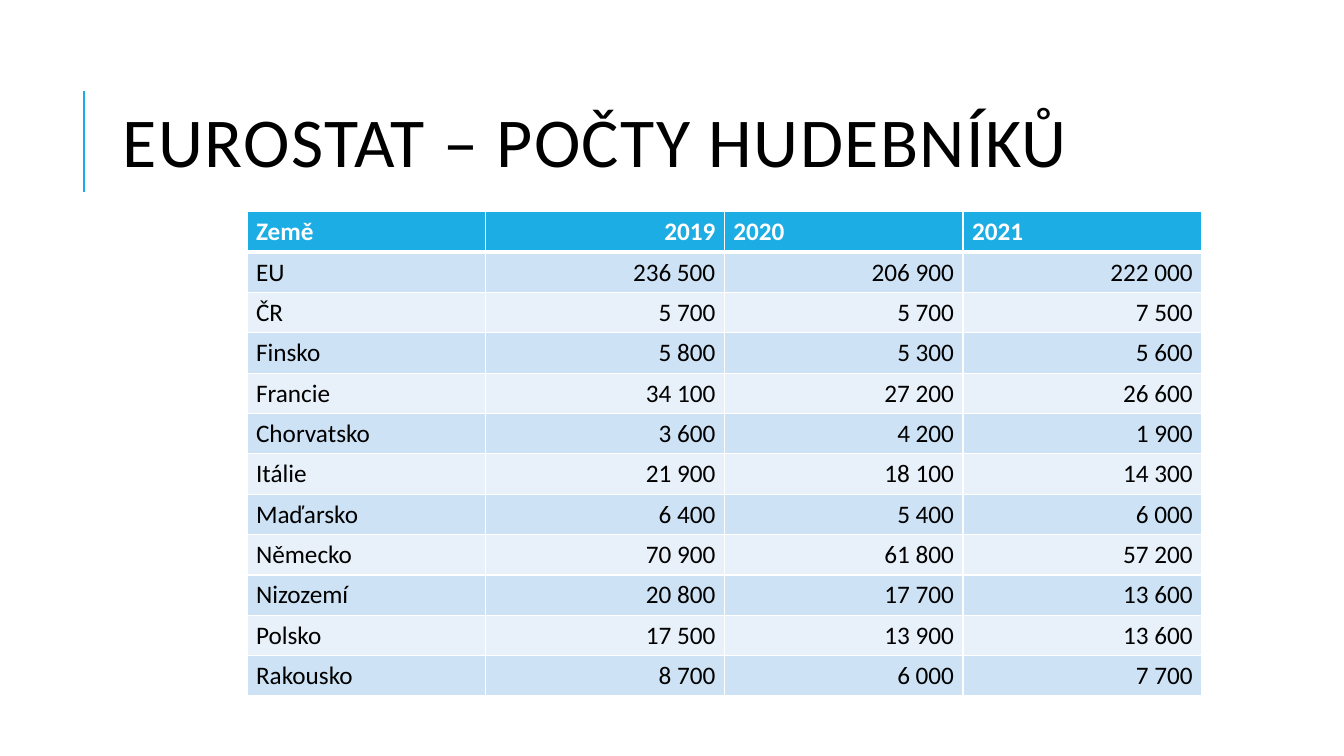
from lxml.etree import SubElement
from pptx import Presentation
from pptx.dml.color import RGBColor
from pptx.enum.shapes import MSO_CONNECTOR
from pptx.enum.text import MSO_ANCHOR, PP_ALIGN
from pptx.oxml.ns import qn
from pptx.util import Inches, Pt

ACCENT, WHITE, BLACK = "1CADE4", "FFFFFF", "000000"
BANDS = ["E8F1FA", "CDE3F5"]
HEADER = ["Země", "2019", "2020", "2021"]
MUSICIANS = [
    ("EU", "236 500", "206 900", "222 000"),
    ("ČR", "5 700", "5 700", "7 500"),
    ("Finsko", "5 800", "5 300", "5 600"),
    ("Francie", "34 100", "27 200", "26 600"),
    ("Chorvatsko", "3 600", "4 200", "1 900"),
    ("Itálie", "21 900", "18 100", "14 300"),
    ("Maďarsko", "6 400", "5 400", "6 000"),
    ("Německo", "70 900", "61 800", "57 200"),
    ("Nizozemí", "20 800", "17 700", "13 600"),
    ("Polsko", "17 500", "13 900", "13 600"),
    ("Rakousko", "8 700", "6 000", "7 700"),
]


def write_text(frame, text, size=18, color=BLACK, bold=False,
               align=PP_ALIGN.LEFT, line_spacing=None, letter_spacing=None):
    paragraph = frame.paragraphs[0]
    paragraph.alignment = align
    paragraph.line_spacing = line_spacing
    run = paragraph.add_run()
    run.text = text
    run.font.name = "Calibri"
    run.font.size = Pt(size)
    run.font.bold = bold
    run.font.color.rgb = RGBColor.from_string(color)
    if letter_spacing:
        run.font._element.set("spc", str(letter_spacing * 100))


def add_borders(cell, bottom_width):
    """Draw white cell borders; call before setting the fill, as XML order matters."""
    properties = cell._tc.get_or_add_tcPr()
    for side, width in [("L", 1), ("R", 1), ("T", 1), ("B", bottom_width)]:
        line = SubElement(properties, qn(f"a:ln{side}"), w=str(Pt(width)))
        fill = SubElement(line, qn("a:solidFill"))
        SubElement(fill, qn("a:srgbClr"), val=WHITE)


presentation = Presentation()
presentation.slide_width = Inches(13.33)
presentation.slide_height = Inches(7.5)
slide = presentation.slides.add_slide(presentation.slide_layouts[6])

# Title with its accent line
accent_line = slide.shapes.add_connector(
    MSO_CONNECTOR.STRAIGHT, Inches(0.83), Inches(1.9), Inches(0.83), Inches(0.9))
accent_line.line.color.rgb = RGBColor.from_string(ACCENT)
accent_line.line.width = Pt(1.5)
SubElement(accent_line._element.spPr, qn("a:effectLst"))

title = slide.shapes.add_textbox(Inches(1.12), Inches(0.64), Inches(10.63), Inches(1.64))
title.text_frame.word_wrap = True
title.text_frame.vertical_anchor = MSO_ANCHOR.MIDDLE
write_text(title.text_frame, "EUROSTAT – POČTY HUDEBNÍKŮ", size=50,
           line_spacing=0.8, letter_spacing=1)

# Table of musicians by country and year
rows = [HEADER, *MUSICIANS]
table = slide.shapes.add_table(
    len(rows), len(HEADER), Inches(2.45), Inches(2.1), Inches(9.47), Inches(4.8)).table
for row_index, row in enumerate(rows):
    is_header = row_index == 0
    table.rows[row_index].height = Inches(0.39)
    for column_index, text in enumerate(row):
        cell = table.cell(row_index, column_index)
        cell.margin_left = cell.margin_right = Inches(0.09)
        cell.margin_top = cell.margin_bottom = Inches(0.05)
        add_borders(cell, bottom_width=3 if is_header else 1)
        cell.fill.solid()
        cell.fill.fore_color.rgb = RGBColor.from_string(
            ACCENT if is_header else BANDS[row_index % 2])
        # In the header only the first year is right-aligned
        is_right = column_index == 1 if is_header else column_index > 0
        write_text(cell.text_frame, text, bold=is_header,
                   color=WHITE if is_header else BLACK,
                   align=PP_ALIGN.RIGHT if is_right else PP_ALIGN.LEFT)

presentation.save("out.pptx")
